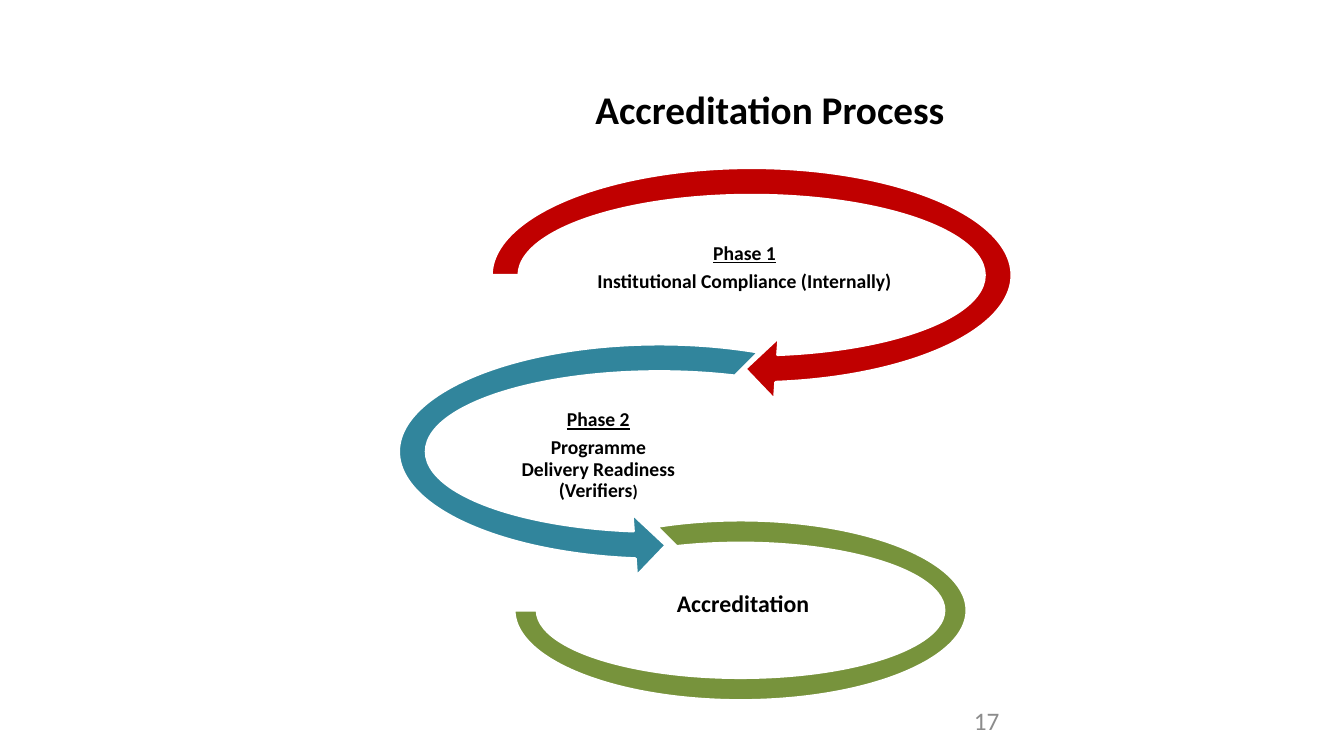
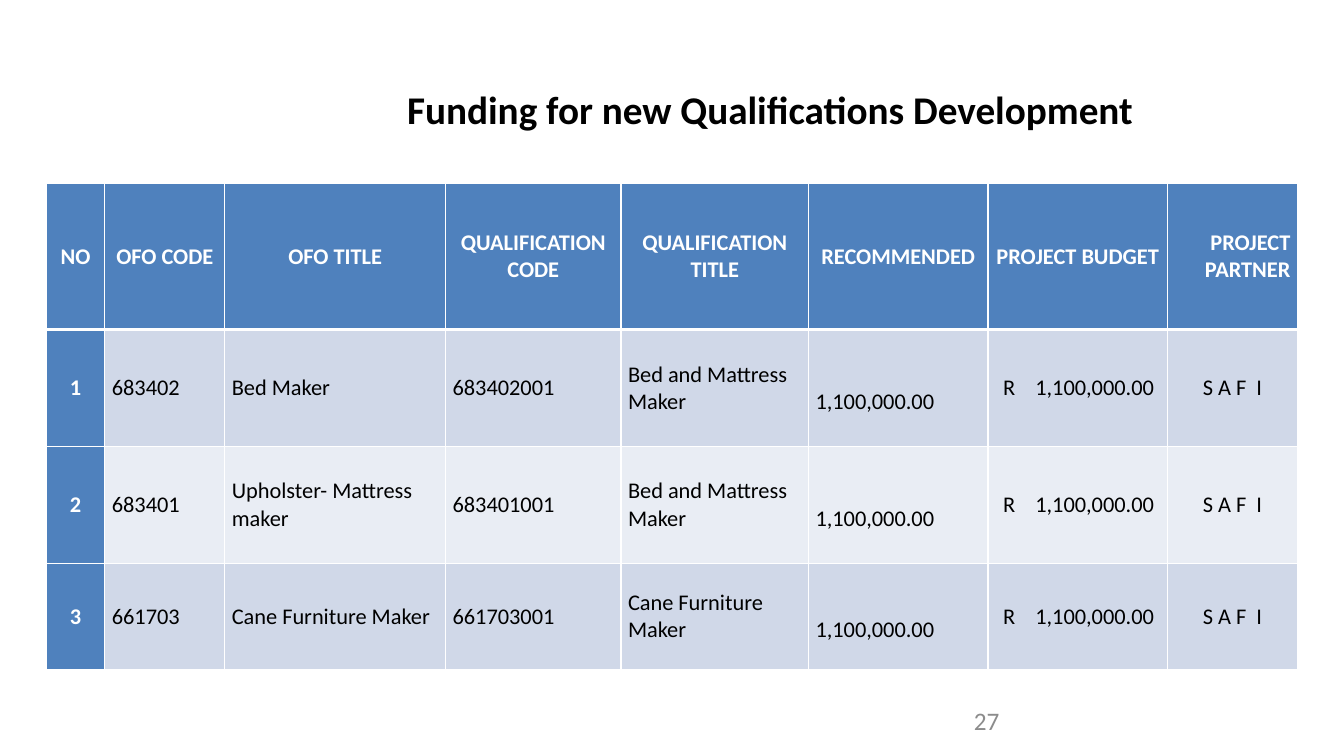
import pptx
import pptx.util
import pptx.dml.color
import pptx.enum.shapes
import pptx.enum.text
import pptx.oxml
import pptx.oxml.ns

Inches, Pt = pptx.util.Inches, pptx.util.Pt
SHAPE = pptx.enum.shapes.MSO_SHAPE
ALIGN = pptx.enum.text.PP_ALIGN
ANCHOR = pptx.enum.text.MSO_ANCHOR

FONT = "Calibri"
COLORS = {
    "black": "000000", "white": "FFFFFF", "grey": "8C8C8C",
    "red": "C00000", "teal": "31859C", "green": "77933C",
    "head": "4F81BD", "band_dark": "D0D8E8", "band_light": "E9EDF4",
}
TITLE_BOX = (2.89, 0.64, 9.49, 0.72)
NUMBER_BOX = (9.56, 6.95, 3.11, 0.4)

# Preset, box, adjustments, colour
ARCS = [
    (SHAPE.CIRCULAR_ARROW, (4.7, 1.49, 5.51, 2.48), (0.11, 11.42, 45, 108, 0.125), "red"),
    (SHAPE.LEFT_CIRCULAR_ARROW, (3.78, 3.24, 5.52, 2.48), (0.11, 11.42, 63, 189, 0.125), "teal"),
    (SHAPE.BLOCK_ARC, (5.1, 5.16, 4.49, 1.79), (135, 108, 0.127), "green"),
]
# Box, text size, underlined heading, body runs as (text, size)
LABELS = [
    ((5.66, 2.27, 3.45, 0.78), 14, "Phase 1", [("Institutional Compliance (Internally)", 14)]),
    ((5.15, 3.95, 1.57, 1.14), 14, "Phase 2",
     [("Programme Delivery Readiness (Verifiers", 14), (")", 12)]),
    ((6.68, 5.65, 1.38, 0.69), 17, None, [("Accreditation", 17)]),
]

# Heading, width, heading alignment, body alignment
COLUMNS = [
    ("NO", 0.58, ALIGN.CENTER, ALIGN.CENTER),
    ("OFO CODE", 1.19, ALIGN.CENTER, ALIGN.LEFT),
    ("OFO TITLE", 2.19, ALIGN.CENTER, ALIGN.LEFT),
    ("QUALIFICATION CODE", 1.74, ALIGN.CENTER, ALIGN.LEFT),
    ("QUALIFICATION TITLE", 1.86, ALIGN.CENTER, ALIGN.LEFT),
    ("RECOMMENDED", 1.78, ALIGN.CENTER, ALIGN.LEFT),
    ("PROJECT BUDGET", 1.78, ALIGN.CENTER, ALIGN.LEFT),
    ("PROJECT PARTNER", 1.29, ALIGN.RIGHT, ALIGN.CENTER),
]
RECOMMENDED, BUDGET = 5, 6
SHARED_CELLS = ("1,100,000.00", "R\t1,100,000.00", "S A F  I")
QUALIFICATIONS = [
    ("683402", "Bed Maker", "683402001", "Bed and Mattress Maker"),
    ("683401", "Upholster- Mattress maker", "683401001", "Bed and Mattress Maker"),
    ("661703", "Cane Furniture Maker", "661703001", "Cane Furniture Maker"),
]
ROW_HEIGHTS = (1.45, 1.16, 1.16, 1.05)
TABLE_LEFT, TABLE_TOP = 0.46, 1.82


def rgb(name):
    return pptx.dml.color.RGBColor.from_string(COLORS[name])


def style(p, size, color="black", bold=False, align=ALIGN.LEFT):
    p.alignment = align
    p.font.name, p.font.size, p.font.bold = FONT, Pt(size), bold
    p.font.color.rgb = rgb(color)


def add_text_frame(s, box, anchor, inset=None):
    tf = s.shapes.add_textbox(*map(Inches, box)).text_frame
    tf.word_wrap = True
    tf.vertical_anchor = anchor
    if inset is not None:
        tf.margin_left = tf.margin_right = tf.margin_top = tf.margin_bottom = Inches(inset)
    return tf


def add_slide(prs, title, number):
    s = prs.slides.add_slide(prs.slide_layouts[6])
    p = add_text_frame(s, TITLE_BOX, ANCHOR.BOTTOM).paragraphs[0]
    p.text = title
    style(p, 28, bold=True, align=ALIGN.CENTER)
    p = add_text_frame(s, NUMBER_BOX, ANCHOR.MIDDLE).paragraphs[0]
    p.text = number
    style(p, 18, "grey")
    return s


def add_arc(s, preset, box, adjustments, color):
    sp = s.shapes.add_shape(preset, *map(Inches, box))
    for i, value in enumerate(adjustments):
        sp.adjustments[i] = value
    sp.shadow.inherit = False
    sp.fill.solid()
    sp.fill.fore_color.rgb = rgb(color)
    sp.line.color.rgb = rgb("white")
    sp.line.width = Pt(2)


def add_label(s, box, size, heading, body):
    tf = add_text_frame(s, box, ANCHOR.MIDDLE, 0.01)
    paragraphs = [[(heading, size)], body] if heading else [body]
    for i, runs in enumerate(paragraphs):
        p = tf.paragraphs[0] if i == 0 else tf.add_paragraph()
        for text, run_size in runs:
            r = p.add_run()
            r.text = text
            if run_size != size:
                r.font.size = Pt(run_size)
        style(p, size, bold=True, align=ALIGN.CENTER)
        p.font.underline = runs[0][0] == heading
        p.line_spacing = 0.9
        p.space_after = Pt(round(0.35 * size))


def set_borders(cell, top, bottom):
    """Draw white cell borders, 1 pt at the sides."""
    tc_pr = cell._tc.get_or_add_tcPr()
    for side, width in (("L", 1), ("R", 1), ("T", top), ("B", bottom)):
        tc_pr.append(pptx.oxml.parse_xml(
            f'<a:ln{side} {pptx.oxml.ns.nsdecls("a")} w="{Pt(width)}"><a:solidFill>'
            f'<a:srgbClr val="{COLORS["white"]}"/></a:solidFill></a:ln{side}>'))


def add_tab_stop(p, position):
    p._p.get_or_add_pPr().append(pptx.oxml.parse_xml(
        f'<a:tabLst {pptx.oxml.ns.nsdecls("a")}>'
        f'<a:tab pos="{Inches(position)}" algn="l"/></a:tabLst>'))


def fill_cell(cell, text, row, col):
    is_head = row == 0 or col == 0
    set_borders(cell, 3 if row == 1 else 1, 3 if row == 0 else 1)
    cell.fill.solid()
    cell.fill.fore_color.rgb = rgb(
        "head" if is_head else "band_dark" if row % 2 else "band_light")
    cell.vertical_anchor = ANCHOR.MIDDLE
    cell.margin_left = cell.margin_right = Inches(0.07)
    cell.margin_top = cell.margin_bottom = 0
    p = cell.text_frame.paragraphs[0]
    p.text = text
    if row and col == RECOMMENDED:
        cell.margin_top = Inches(0.27)
    if row and col == BUDGET:
        cell.margin_left = Inches(0.15)
        add_tab_stop(p, 0.32)
    style(p, 16, "white" if is_head else "black", is_head, COLUMNS[col][2 if row == 0 else 3])


def add_funding_table(s):
    rows = [[column[0] for column in COLUMNS]]
    rows += [(str(n), *cells, *SHARED_CELLS) for n, cells in enumerate(QUALIFICATIONS, 1)]
    widths = [column[1] for column in COLUMNS]
    box = (TABLE_LEFT, TABLE_TOP, sum(widths), sum(ROW_HEIGHTS))
    table = s.shapes.add_table(len(rows), len(widths), *map(Inches, box)).table
    for column, width in zip(table.columns, widths):
        column.width = Inches(width)
    for i, (height, cells) in enumerate(zip(ROW_HEIGHTS, rows)):
        table.rows[i].height = Inches(height)
        for j, text in enumerate(cells):
            fill_cell(table.cell(i, j), text, i, j)


def main():
    prs = pptx.Presentation()
    prs.slide_width, prs.slide_height = Inches(13.33), Inches(7.5)
    s = add_slide(prs, "Accreditation Process", "17")
    for arc, label in zip(ARCS, LABELS):
        add_arc(s, *arc)
        add_label(s, *label)
    s = add_slide(prs, "Funding for new Qualifications Development", "27")
    add_funding_table(s)
    prs.save("out.pptx")


if __name__ == "__main__":
    main()
